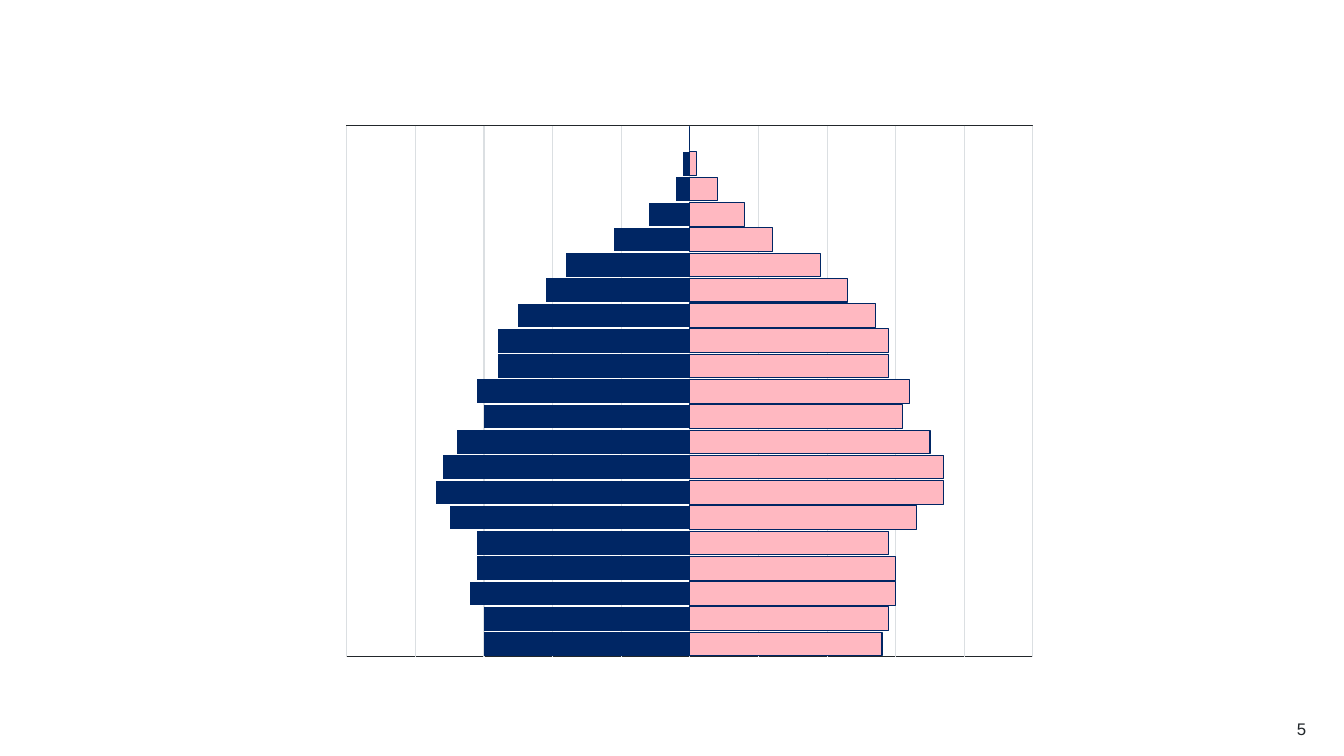
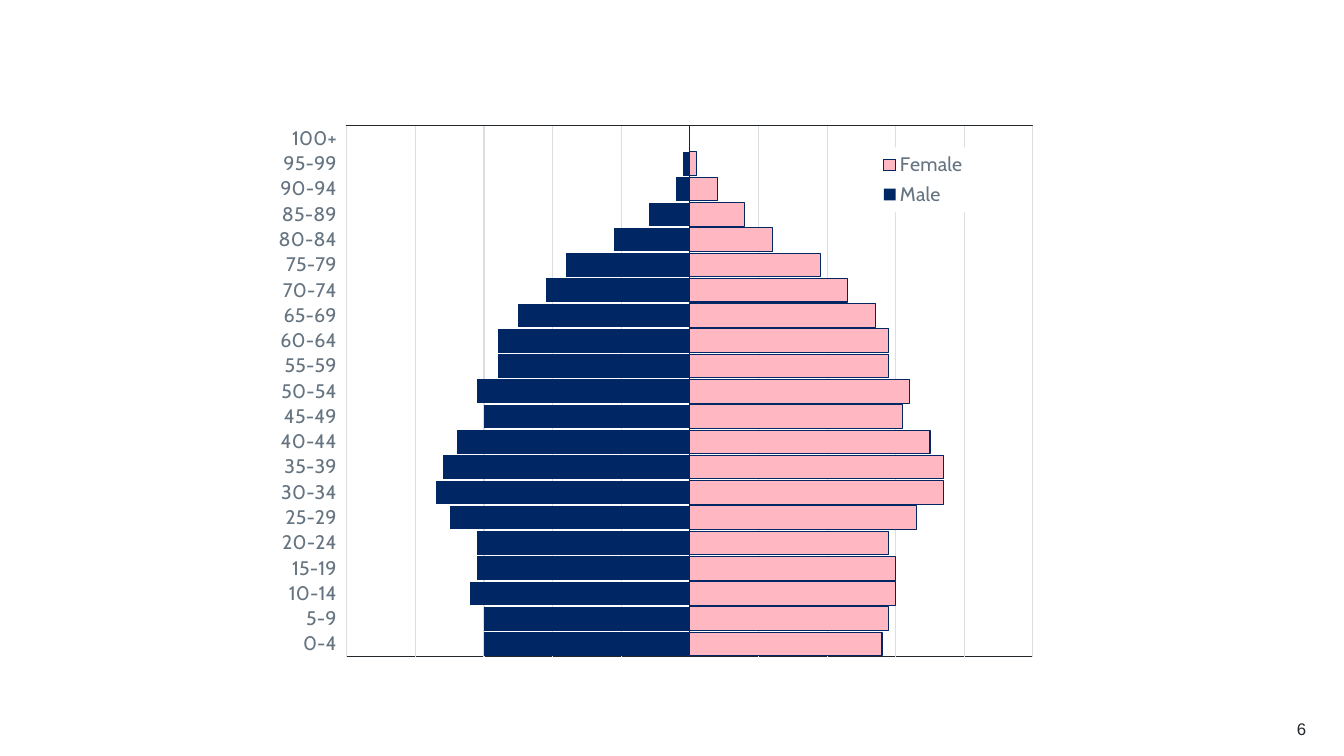
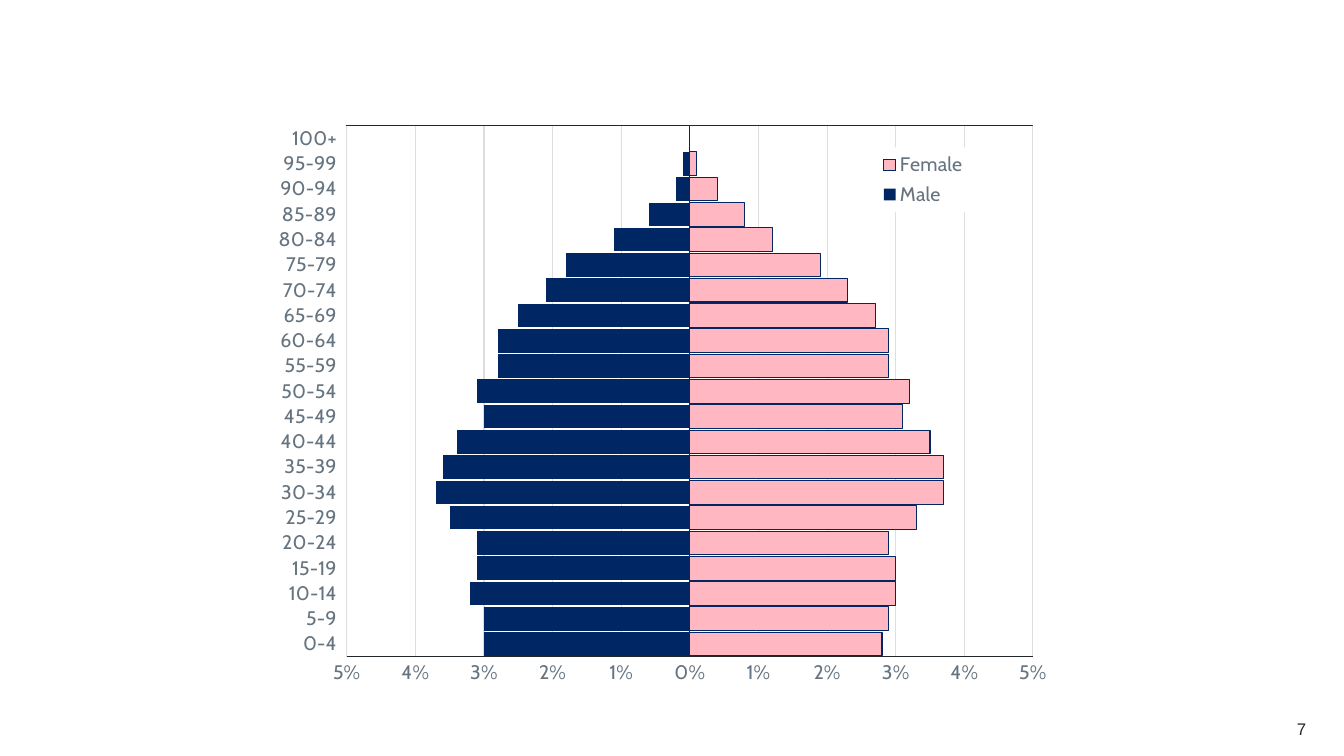
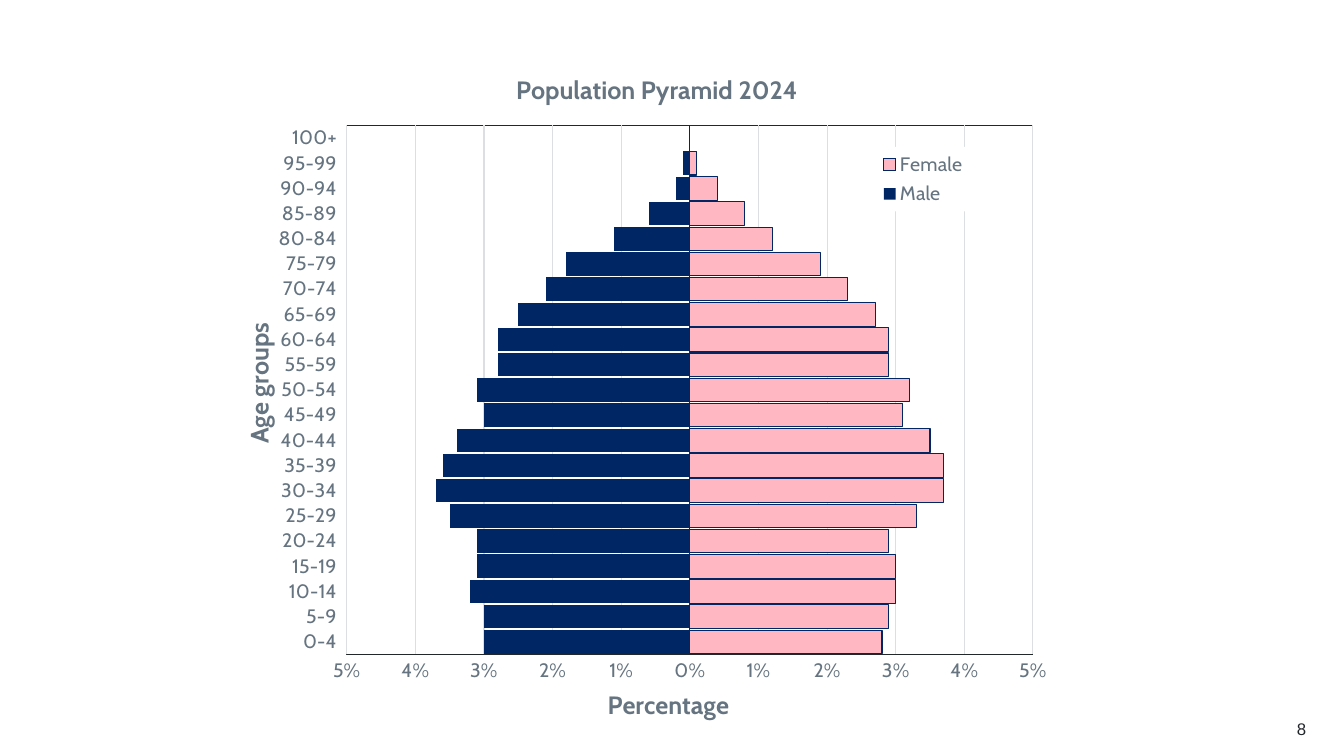
from dataclasses import dataclass
from typing import NamedTuple

from lxml.etree import SubElement
from pptx import Presentation
from pptx.chart.axis import CategoryAxis, ValueAxis
from pptx.chart.chart import Chart
from pptx.chart.data import CategoryChartData
from pptx.dml.color import RGBColor
from pptx.dml.line import LineFormat
from pptx.enum.chart import (XL_CHART_TYPE, XL_LEGEND_POSITION, XL_TICK_LABEL_POSITION,
                             XL_TICK_MARK)
from pptx.enum.text import PP_ALIGN
from pptx.oxml import parse_xml
from pptx.oxml.ns import nsdecls, qn
from pptx.util import Cm, Pt

NAVY = "002664"
PINK = "FFB8C1"
INK = "22272B"
SLATE = "657480"
GRID = "DBDFE2"
WHITE = "FFFFFF"
BODY_FONT = "Arial"
CHART_FONT = "Cabin"
HAIRLINE = Pt(0.75)


class AgeGroup(NamedTuple):
    label: str
    male: float
    female: float


class Area(NamedTuple):
    x: float
    y: float
    w: float = 0
    h: float = 0


class TitleStyle(NamedTuple):
    text: str
    area: Area
    rotation: int = 0


@dataclass
class Stage:
    page: int
    ages_shown: bool = False
    percent_shown: bool = False
    titles_shown: bool = False


POPULATION = [
    AgeGroup("0-4", 3.0, 2.8),
    AgeGroup("5-9", 3.0, 2.9),
    AgeGroup("10-14", 3.2, 3.0),
    AgeGroup("15-19", 3.1, 3.0),
    AgeGroup("20-24", 3.1, 2.9),
    AgeGroup("25-29", 3.5, 3.3),
    AgeGroup("30-34", 3.7, 3.7),
    AgeGroup("35-39", 3.6, 3.7),
    AgeGroup("40-44", 3.4, 3.5),
    AgeGroup("45-49", 3.0, 3.1),
    AgeGroup("50-54", 3.1, 3.2),
    AgeGroup("55-59", 2.8, 2.9),
    AgeGroup("60-64", 2.8, 2.9),
    AgeGroup("65-69", 2.5, 2.7),
    AgeGroup("70-74", 2.1, 2.3),
    AgeGroup("75-79", 1.8, 1.9),
    AgeGroup("80-84", 1.1, 1.2),
    AgeGroup("85-89", 0.6, 0.8),
    AgeGroup("90-94", 0.2, 0.4),
    AgeGroup("95-99", 0.1, 0.1),
    AgeGroup("100+", 0, 0),
]

STAGES = [
    Stage(5),
    Stage(6, ages_shown=True),
    Stage(7, ages_shown=True, percent_shown=True),
    Stage(8, ages_shown=True, percent_shown=True, titles_shown=True),
]

PLOT_AREA = Area(0.16, 0.16, 0.75, 0.74)
LEGEND_AREA = Area(0.74, 0.19, 0.1, 0.09)
HEADING = TitleStyle("Population Pyramid 2024", Area(0.34, 0.08))
AGE_TITLE = TitleStyle("Age groups", Area(0.04, 0.43), -5400000)
PERCENT_TITLE = TitleStyle("Percentage", Area(0.44, 0.94))


def color(value: str) -> RGBColor:
    return RGBColor.from_string(value)


def style_font(font, size: int, tint: str, face: str, bold: bool = False) -> None:
    font.size = Pt(size)
    font.bold = bold
    font.name = face
    font.color.rgb = color(tint)


def style_line(line: LineFormat, tint: str) -> None:
    line.width = HAIRLINE
    line.color.rgb = color(tint)


def place(part, area: Area, inner: bool = False) -> None:
    for earlier in part.findall(qn("c:layout")):
        part.remove(earlier)
    layout = parse_xml(f"<c:layout {nsdecls('c')}/>")
    manual = SubElement(layout, qn("c:manualLayout"))
    settings = [("layoutTarget", "inner")] if inner else []
    settings += [("xMode", "edge"), ("yMode", "edge")]
    settings += [(key, str(size)) for key, size in area._asdict().items() if size]
    for key, setting in settings:
        SubElement(manual, qn(f"c:{key}")).set("val", setting)
    overlay = part.find(qn("c:overlay"))
    if overlay is None:
        part.insert(0, layout)
    else:
        overlay.addprevious(layout)


def frame_plot(chart: Chart) -> None:
    plot_area = chart._chartSpace.chart.plotArea
    place(plot_area, PLOT_AREA, inner=True)
    plot_area.append(parse_xml(
        f"<c:spPr {nsdecls('c', 'a')}><a:noFill/><a:ln w=\"{HAIRLINE}\"><a:solidFill>"
        f"<a:srgbClr val=\"{INK}\"/></a:solidFill></a:ln></c:spPr>"))


def write_title(title, style: TitleStyle) -> None:
    frame = title.text_frame
    frame.text = style.text
    style_font(frame.paragraphs[0].runs[0].font, 18, SLATE, CHART_FONT, bold=True)
    frame._txBody.bodyPr.set("rot", str(style.rotation))
    frame._txBody.bodyPr.set("vert", "horz")
    place(title._element, style.area)


def style_axis(axis: CategoryAxis | ValueAxis, shown: bool) -> None:
    axis.visible = shown
    axis.major_tick_mark = XL_TICK_MARK.NONE
    axis.minor_tick_mark = XL_TICK_MARK.NONE
    style_font(axis.tick_labels.font, 14, SLATE, CHART_FONT)
    style_line(axis.format.line, INK)


def add_legend(chart: Chart) -> None:
    chart.has_legend = True
    legend = chart.legend
    legend.position = XL_LEGEND_POSITION.RIGHT
    legend.include_in_layout = False
    style_font(legend.font, 14, SLATE, CHART_FONT)
    place(legend._element, LEGEND_AREA)
    legend._element.find(qn("c:overlay")).addnext(parse_xml(
        f"<c:spPr {nsdecls('c', 'a')}><a:solidFill><a:srgbClr val=\"{WHITE}\"/>"
        "</a:solidFill></c:spPr>"))


def pyramid_data(stage: Stage) -> CategoryChartData:
    number_format = "#,##0%;#,##0%" if stage.percent_shown else "0.00%"
    data = CategoryChartData(number_format=number_format)
    if stage.ages_shown:
        data.categories = [group.label for group in POPULATION]
        names = ("Male", "Female")
    else:
        data.categories = [str(rank) for rank in range(1, len(POPULATION) + 1)]
        names = ("Series 1", "Series 2")
    data.add_series(names[0], [round(-group.male / 100, 3) for group in POPULATION])
    data.add_series(names[1], [round(group.female / 100, 3) for group in POPULATION])
    return data


def add_pyramid(slide, stage: Stage) -> None:
    chart = slide.shapes.add_chart(
        XL_CHART_TYPE.BAR_CLUSTERED, Cm(5.05), Cm(0.28), Cm(23.06), Cm(18.08),
        pyramid_data(stage)).chart
    style_font(chart.font, 10, INK, BODY_FONT)
    chart.has_title = False
    chart.has_legend = False
    frame_plot(chart)

    bars = chart.plots[0]
    bars.gap_width = 7
    bars.overlap = 100
    bars.vary_by_categories = False
    male, female = bars.series
    for sex, tint in ((male, NAVY), (female, PINK)):
        sex.invert_if_negative = False
        sex.format.fill.solid()
        sex.format.fill.fore_color.rgb = color(tint)
    male.format.line.fill.background()
    style_line(female.format.line, NAVY)

    ages, percent = chart.category_axis, chart.value_axis
    style_axis(ages, stage.ages_shown)
    ages.tick_label_position = XL_TICK_LABEL_POSITION.LOW
    style_axis(percent, stage.percent_shown)
    percent.minimum_scale, percent.maximum_scale = -0.05, 0.05
    percent.major_unit = 0.01
    percent.has_major_gridlines = True
    style_line(percent.major_gridlines.format.line, GRID)
    percent.tick_labels.number_format = "#,##0%;#,##0%" if stage.percent_shown else "0.00%"
    percent.tick_labels.number_format_is_linked = False

    if stage.ages_shown:
        add_legend(chart)
    if stage.titles_shown:
        write_title(chart.chart_title, HEADING)
        write_title(ages.axis_title, AGE_TITLE)
        write_title(percent.axis_title, PERCENT_TITLE)


def add_page_number(slide, page: int) -> None:
    frame = slide.shapes.add_textbox(Cm(30.91), Cm(18.11), Cm(2.01), Cm(0.51)).text_frame
    frame.word_wrap = True
    frame.margin_left = frame.margin_right = frame.margin_top = frame.margin_bottom = 0
    paragraph = frame.paragraphs[0]
    paragraph.text = str(page)
    paragraph.alignment = PP_ALIGN.RIGHT
    style_font(paragraph.runs[0].font, 12, INK, BODY_FONT)


def main() -> None:
    deck = Presentation()
    deck.slide_width, deck.slide_height = Cm(33.87), Cm(19.05)
    for stage in STAGES:
        slide = deck.slides.add_slide(deck.slide_layouts[6])
        add_pyramid(slide, stage)
        add_page_number(slide, stage.page)
    deck.save("out.pptx")


if __name__ == "__main__":
    main()
